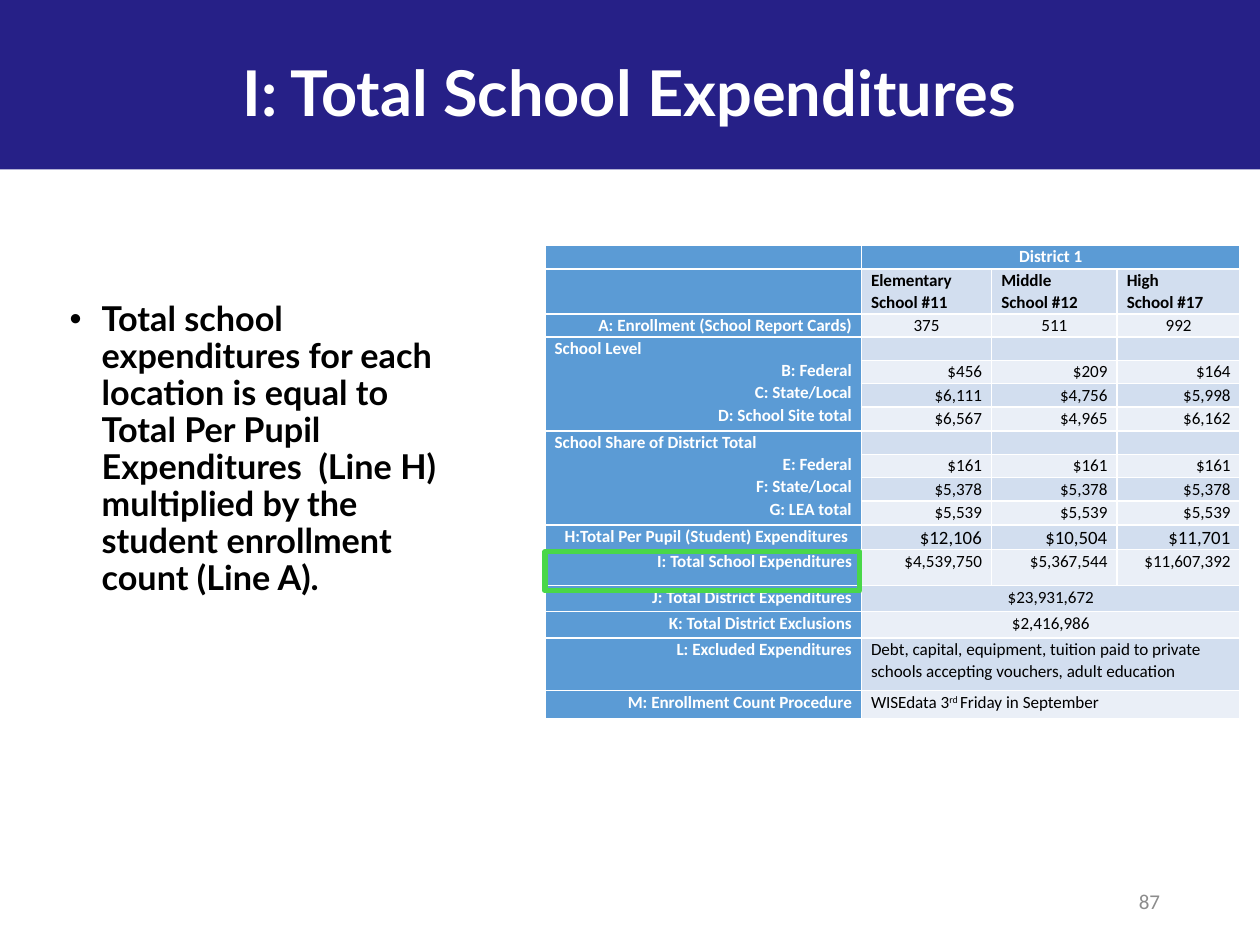
from dataclasses import dataclass

from lxml import etree
from pptx import Presentation
from pptx import util as u
from pptx.dml.color import RGBColor
from pptx.enum import shapes, text
from pptx.oxml.ns import qn

Cm = u.Cm
LEFT, CENTER, RIGHT = text.PP_ALIGN.LEFT, text.PP_ALIGN.CENTER, text.PP_ALIGN.RIGHT


@dataclass(frozen=True)
class Theme:
    navy: str = "262087"
    label: str = "5B9BD5"
    bands: tuple = ("EAEFF7", "D2DEEF")
    marker: str = "49D749"
    white: str = "FFFFFF"
    black: str = "000000"
    grey: str = "8C8C8C"
    heading_font: str = "Lato"
    table_font: str = "Calibri"
    title_size: float = 36.9
    body_size: float = 20
    number_size: float = 12.3
    table_size: float = 10
    per_pupil_size: float = 11


THEME = Theme()
SUPERSCRIPT = "30000"
COLUMN_WIDTHS = (6.53, 2.69, 2.59, 2.54)
HIGHLIGHTED = "I: Total School Expenditures"

# Height in cm, label, alignment of the values, values (a single value spans all schools)
ROWS = [
    (0.49, "", CENTER, ["District 1"]),
    (0.93, "", LEFT, ["Elementary\nSchool #11", "Middle\nSchool #12", "High\nSchool #17"]),
    (0.48, "A: Enrollment (School Report Cards)", CENTER, ["375", "511", "992"]),
    (0.48, "School Level\nB: Federal\nC: State/Local\nD: School Site total", RIGHT, ["", "", ""]),
    (0.48, None, RIGHT, ["$456", "$209", "$164"]),
    (0.48, None, RIGHT, ["$6,111", "$4,756", "$5,998"]),
    (0.50, None, RIGHT, ["$6,567", "$4,965", "$6,162"]),
    (0.48, "School Share of District Total\nE: Federal\nF: State/Local\nG: LEA total",
     RIGHT, ["", "", ""]),
    (0.48, None, RIGHT, ["$161", "$161", "$161"]),
    (0.48, None, RIGHT, ["$5,378", "$5,378", "$5,378"]),
    (0.50, None, RIGHT, ["$5,539", "$5,539", "$5,539"]),
    (0.51, "H:Total Per Pupil (Student) Expenditures ", RIGHT, ["$12,106", "$10,504", "$11,701"]),
    (0.74, HIGHLIGHTED, RIGHT, ["$4,539,750", "$5,367,544", "$11,607,392"]),
    (0.54, "J: Total District Expenditures", CENTER, ["$23,931,672"]),
    (0.54, "K: Total District Exclusions", CENTER, ["$2,416,986"]),
    (1.09, "L: Excluded Expenditures", LEFT,
     ["Debt, capital, equipment, tuition paid to private schools accepting vouchers, "
      "adult education"]),
    (0.57, "M: Enrollment Count Procedure", LEFT, [("WISEdata 3", "rd ", "Friday in September")]),
]


def set_font(paragraph, name, size, color, bold=False):
    font = paragraph.font
    font.name, font.size, font.bold = name, u.Pt(size), bold
    font.color.rgb = RGBColor.from_string(color)


def add_title(slide, box, band_height):
    left, top, width, height = box
    band = slide.shapes.add_shape(shapes.MSO_SHAPE.RECTANGLE, left, top, width, band_height)
    band.shadow.inherit = False
    band.fill.solid()
    band.fill.fore_color.rgb = RGBColor.from_string(THEME.navy)
    band.line.fill.background()

    title = slide.shapes.title
    title._element.addprevious(band._element)
    title.left, title.top, title.width, title.height = left, top, width, height
    frame = title.text_frame
    frame.text = "I: Total School Expenditures"
    frame.auto_size = text.MSO_AUTO_SIZE.NONE
    frame.vertical_anchor = text.MSO_ANCHOR.MIDDLE
    heading = frame.paragraphs[0]
    heading.alignment = CENTER
    set_font(heading, THEME.heading_font, THEME.title_size, THEME.white, bold=True)


def add_explanation(slide, box):
    frame = slide.shapes.add_textbox(*box).text_frame
    frame.word_wrap = True
    point = frame.paragraphs[0]
    point.text = ("Total school expenditures for each location is equal to Total Per Pupil "
                  "Expenditures  (Line H) multiplied by the student enrollment count (Line A).")
    point.line_spacing = 0.9
    properties = point._p.get_or_add_pPr()
    indent = Cm(0.66)
    properties.set("marL", str(indent))
    properties.set("indent", str(-indent))
    etree.SubElement(properties, qn("a:buFont"), typeface="Arial")
    etree.SubElement(properties, qn("a:buChar"), char="•")
    set_font(point, THEME.heading_font, THEME.body_size, THEME.black, bold=True)


def fill_cell(cell, content, alignments, fill, color, size=THEME.table_size, bold=False):
    """Write one paragraph per line; the last alignment serves all further lines.

    A tuple holds the text before, in and after a superscript.
    """
    cell.margin_left = cell.margin_right = Cm(0.2)
    cell.margin_top = cell.margin_bottom = 0
    cell.fill.solid()
    cell.fill.fore_color.rgb = RGBColor.from_string(fill)
    if isinstance(content, tuple):
        runs = [cell.text_frame.paragraphs[0].add_run() for _ in content]
        for run, part in zip(runs, content):
            run.text = part
        runs[1]._r.get_or_add_rPr().set("baseline", SUPERSCRIPT)
    else:
        cell.text_frame.text = content
    for number, paragraph in enumerate(cell.text_frame.paragraphs):
        paragraph.alignment = alignments[min(number, len(alignments) - 1)]
        paragraph.line_spacing = 1.07
        set_font(paragraph, THEME.table_font, size, color, bold)


def add_expenditures(slide, box):
    table = slide.shapes.add_table(len(ROWS), len(COLUMN_WIDTHS), *box).table
    for column, width in zip(table.columns, COLUMN_WIDTHS):
        column.width = Cm(width)

    for index, (height, label, alignment, values) in enumerate(ROWS):
        table.rows[index].height = Cm(height)
        is_group = "\n" in (label or "")
        fill_cell(table.cell(index, 0), label or "", (LEFT, RIGHT) if is_group else (RIGHT,),
                  THEME.label, THEME.white, bold=True)
        if is_group:
            table.cell(index, 0).merge(table.cell(index + label.count("\n"), 0))

        is_header = index == 0
        per_pupil = (label or "").startswith("H:")
        for column in range(1, len(COLUMN_WIDTHS)):
            content = values[column - 1] if column <= len(values) else ""
            fill_cell(table.cell(index, column), content, (alignment,),
                      THEME.label if is_header else THEME.bands[index % 2],
                      THEME.white if is_header else THEME.black,
                      THEME.per_pupil_size if per_pupil else THEME.table_size,
                      bold=index < 2)
        if len(values) == 1:
            table.cell(index, 1).merge(table.cell(index, len(COLUMN_WIDTHS) - 1))


def add_highlight(slide, table_box):
    """Frame the label of the highlighted table row."""
    left, top = table_box[:2]
    row = [label for _, label, _, _ in ROWS].index(HIGHLIGHTED)
    offset = sum(height for height, *_ in ROWS[:row])
    frame = slide.shapes.add_shape(shapes.MSO_SHAPE.RECTANGLE, left, top + Cm(offset + 0.04),
                                   Cm(COLUMN_WIDTHS[0] - 0.03), Cm(0.81))
    frame.shadow.inherit = False
    frame.fill.background()
    frame.line.color.rgb = RGBColor.from_string(THEME.marker)
    frame.line.width = u.Pt(3)


def add_slide_number(slide, box):
    frame = slide.shapes.add_textbox(*box).text_frame
    frame.word_wrap = True
    frame.vertical_anchor = text.MSO_ANCHOR.MIDDLE
    number = frame.paragraphs[0]
    number.text = "87"
    number.alignment = RIGHT
    set_font(number, THEME.table_font, THEME.number_size, THEME.grey)


def main():
    prs = Presentation()
    prs.slide_width, prs.slide_height = Cm(26.01), Cm(19.51)
    slide = prs.slides.add_slide(prs.slide_layouts.get_by_name("Title Only"))
    table_box = (Cm(11.25), Cm(5.06), Cm(sum(COLUMN_WIDTHS)), Cm(sum(row[0] for row in ROWS)))
    add_title(slide, (0, 0, prs.slide_width, Cm(3.76)), band_height=Cm(3.5))
    add_slide_number(slide, (Cm(18.36), Cm(18.08), Cm(5.84), Cm(1.04)))
    add_explanation(slide, (Cm(1.19), Cm(6.12), Cm(8.56), Cm(9.91)))
    add_expenditures(slide, table_box)
    add_highlight(slide, table_box)
    prs.save("out.pptx")


if __name__ == "__main__":
    main()
